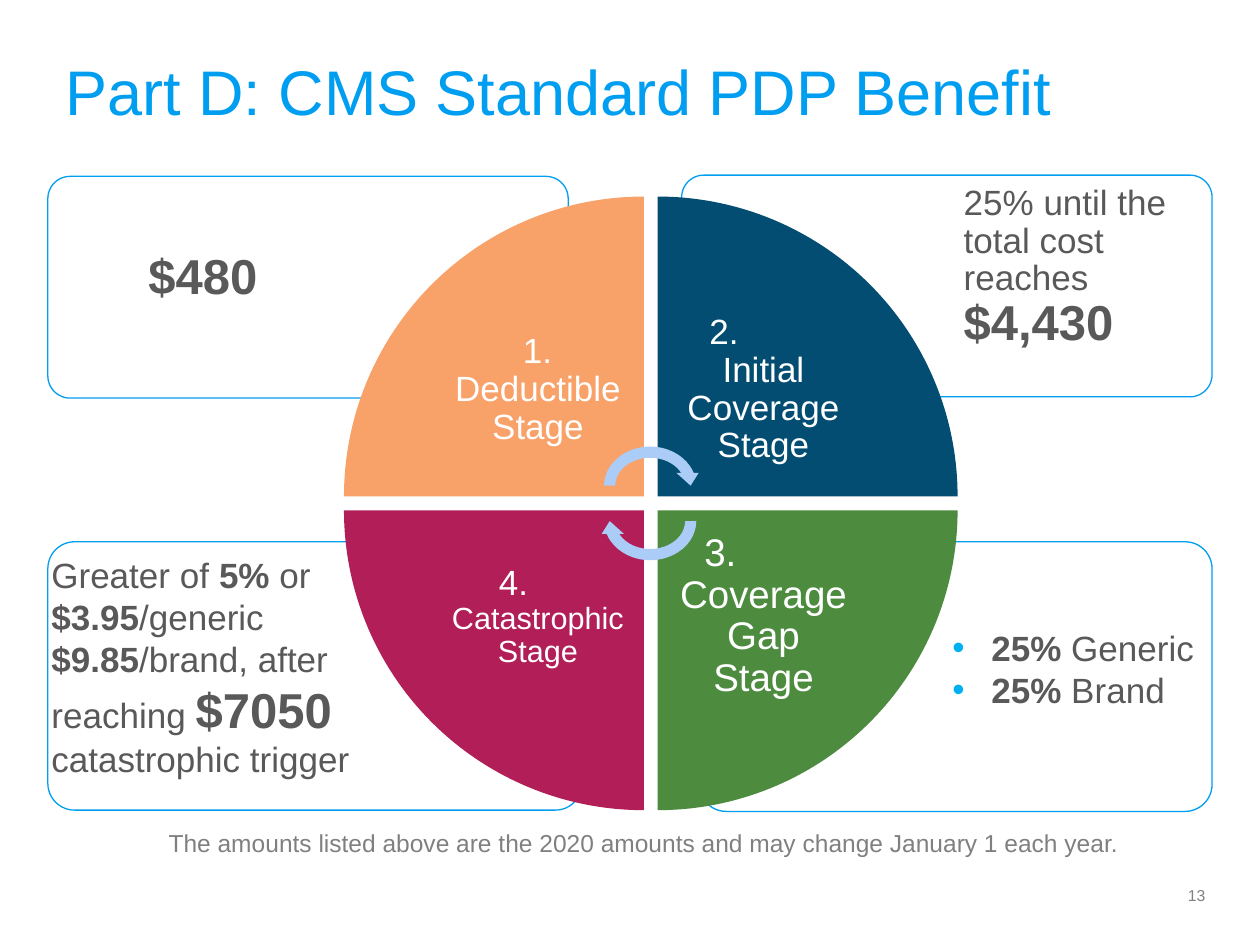
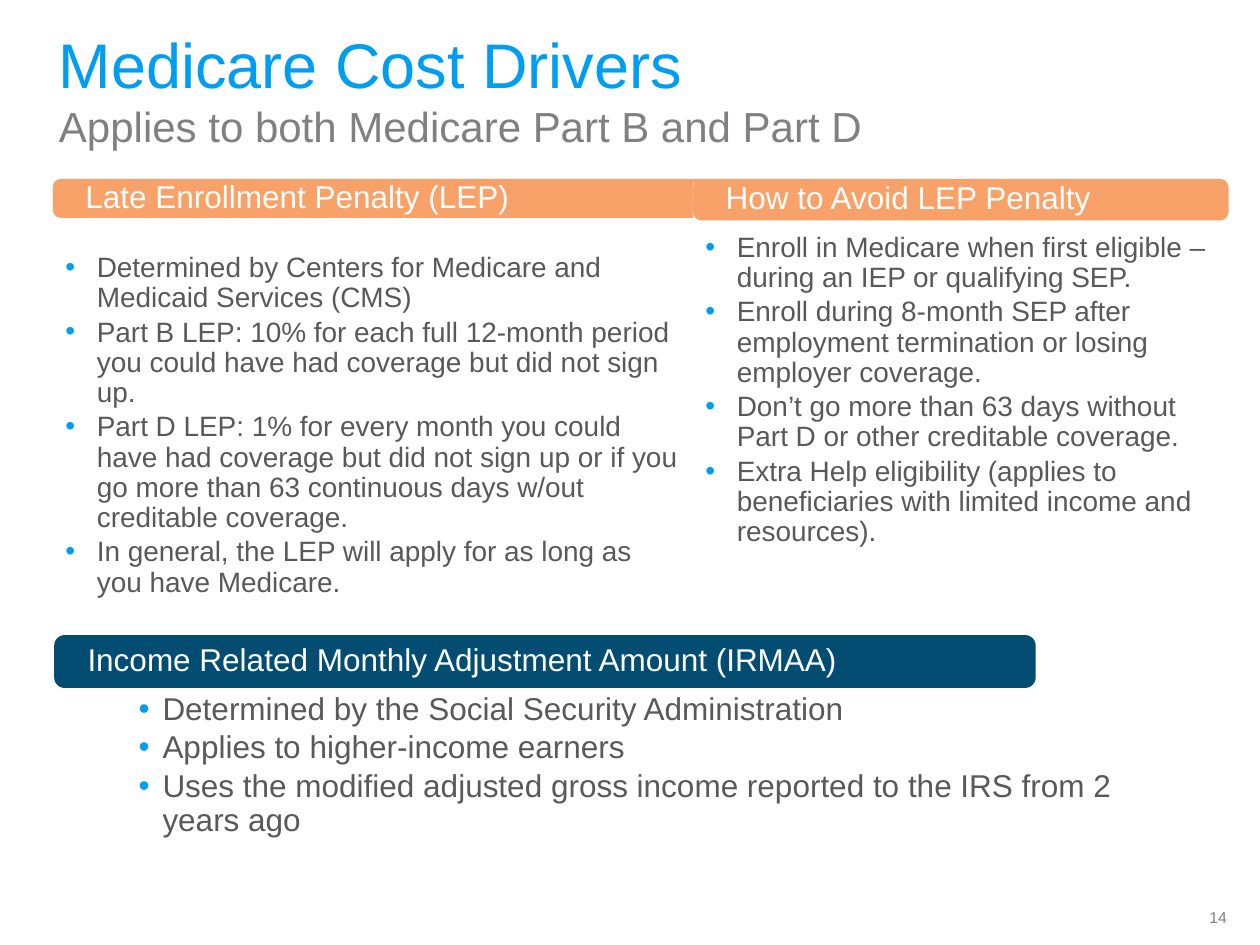
import pptx
import pptx.dml.color
import pptx.enum.shapes
import pptx.enum.text
import pptx.oxml
import pptx.oxml.ns
import pptx.util

PX = 9144  # one px is a hundredth of an inch
FONT = "Arial"
COLORS = {
    "title": "009EF0", "text": "595959", "muted": "808080", "white": "FFFFFF",
    "bullet": "00B0F0", "orange": "F8A169", "navy": "024D71",
    "green": "4D8B3F", "crimson": "B11E58", "arrow": "ABCCF6",
}
SHAPE = pptx.enum.shapes.MSO_SHAPE
ALIGN = pptx.enum.text.PP_ALIGN
ANCHOR = pptx.enum.text.MSO_ANCHOR
Pt = pptx.util.Pt


def place(page, kind, at, fill=None, line=None):
    """Add a preset shape, or a text box when kind is None."""
    left, top, width, height = (value * PX for value in at)
    if kind is None:
        return page.shapes.add_textbox(left, top, width, height)
    shape = page.shapes.add_shape(kind, left, top, width, height)
    shape.shadow.inherit = False
    shape.fill.solid()
    shape.fill.fore_color.rgb = pptx.dml.color.RGBColor.from_string(COLORS[fill])
    if line:
        shape.line.color.rgb = pptx.dml.color.RGBColor.from_string(COLORS[line])
        shape.line.width = Pt(0.75)
    else:
        shape.line.fill.background()
    return shape


def write(box, lines, size, color="text", insets=(10, 5, 10, 5), anchor=ANCHOR.TOP,
          align=ALIGN.LEFT, spacing=1.0, after=0, hang=0, bullet="title"):
    """Fill a box; each line is a list of (text, font overrides)."""
    frame = box.text_frame
    left, top, right, bottom = (value * PX for value in insets)
    settings = {"word_wrap": True, "vertical_anchor": anchor, "margin_left": left,
                "margin_top": top, "margin_right": right, "margin_bottom": bottom}
    for name, value in settings.items():
        setattr(frame, name, value)
    for index, line in enumerate(lines):
        para = frame.add_paragraph() if index else frame.paragraphs[0]
        if hang:
            props = para._p.get_or_add_pPr()
            props.set("marL", str(hang * PX))
            props.set("indent", str(-hang * PX))
            space = pptx.oxml.ns.nsdecls("a")
            for xml in (f'<a:buClr {space}><a:srgbClr val="{COLORS[bullet]}"/></a:buClr>',
                        f'<a:buFont {space} typeface="{FONT}"/>',
                        f'<a:buChar {space} char="•"/>'):
                props.append(pptx.oxml.parse_xml(xml))
        for name, value in {"alignment": align, "line_spacing": spacing,
                            "space_after": Pt(after)}.items():
            setattr(para, name, value)
        for text, changes in line:
            look = {"name": FONT, "size": size, "bold": False, "color": color, **changes}
            span = para.add_run()
            span.text = text
            span.font.color.rgb = pptx.dml.color.RGBColor.from_string(COLORS[look.pop("color")])
            look["size"] = Pt(look["size"])
            for name, value in look.items():
                setattr(span.font, name, value)


deck = pptx.Presentation()
deck.slide_width = 1000 * PX
deck.slide_height = 750 * PX

# Titles and page numbers
subtitle = ("Applies to both Medicare Part B and Part D", {"size": 24, "color": "muted"})
headings = [
    ((42, 37, 913, 71), [[("Part D: CMS Standard PDP Benefit", {})]], "13", (933, 700, 42, 24)),
    ((37, 15, 926, 111), [[("Medicare Cost Drivers", {})], [subtitle]], "14", (950, 717, 42, 24)),
]
pages = []
for title_at, title_lines, number, number_at in headings:
    page = deck.slides.add_slide(deck.slide_layouts[6])
    write(place(page, None, title_at), title_lines, 36, "title")
    write(place(page, None, number_at), [[(number, {})]], 9, "muted", spacing=0.9)
    pages.append(page)
benefit_page, cost_page = pages

# Benefit page: cards behind the wheel
for card_at in ((555, 430, 407, 214), (38, 430, 424, 213),
                (541, 139, 421, 176), (38, 140, 413, 176)):
    card = place(benefit_page, SHAPE.ROUNDED_RECTANGLE, card_at, "white", "title")
    card.adjustments[0] = 0.1

# Wheel of four stages, clockwise from the top left
WEDGE = 238
columns, rows = (273, 522), (156, 405)
label_lefts, label_tops = (357, 536), (241, 421)
stages = [
    # column, row, fill, number, name, number size, name size, number indent
    (0, 0, "orange", "1.", "Deductible Stage", 20, 20, 58),
    (1, 0, "navy", "2.", "Initial Coverage Stage", 20, 20, 27),
    (1, 1, "green", "3.", "Coverage Gap Stage", 22, 22, 23),
    (0, 1, "crimson", "4.", "Catastrophic Stage", 20, 17.5, 39),
]
for turn, (column, row, fill, number, name, number_size, name_size, indent) in enumerate(stages):
    wedge = place(benefit_page, SHAPE.PIE_WEDGE,
                  (columns[column], rows[row], WEDGE, WEDGE), fill)
    wedge.rotation = 90 * turn
    label = place(benefit_page, None, (label_lefts[column], label_tops[row], 140, 137))
    write(label, [[(number, {"size": number_size})], [(name, {})]], name_size, "white",
          insets=(0, 0, 0, 0), anchor=ANCHOR.MIDDLE, align=ALIGN.CENTER, spacing=0.9)
    first = label.text_frame.paragraphs[0]
    first.alignment = ALIGN.LEFT
    first._p.get_or_add_pPr().set("marL", str(indent * PX))

# Cycle arrows in the hub
for top, rotation in ((350, 0), (378, 180)):
    arrow = place(benefit_page, SHAPE.CIRCULAR_ARROW, (475, top, 82, 71), "arrow")
    arrow.rotation = rotation

# Amounts for each stage
BOLD = {"bold": True}
BIG = {"bold": True, "size": 28}
write(place(benefit_page, None, (31, 434, 300, 192)), [
    [("Greater of ", {}), ("5%", BOLD), (" or", {})],
    [("$3.95", BOLD), ("/generic", {})],
    [("$9.85", BOLD), ("/brand, after", {})],
    [("reaching ", {}), ("$7050", BIG)],
    [("catastrophic trigger", {})],
], 20)
write(place(benefit_page, None, (108, 195, 164, 53)), [[("$480", BIG)]], 20, spacing=0.9)
write(place(benefit_page, None, (755, 142, 199, 143)),
      [[("25% until the total cost reaches ", {}), ("$4,430", BIG)]], 20, spacing=0.9)
write(place(benefit_page, None, (746, 492, 216, 77)),
      [[("25% ", BOLD), (kind, {})] for kind in ("Generic", "Brand")],
      20, hang=31, bullet="bullet")
write(place(benefit_page, None, (82, 655, 858, 31)),
      [[("The amounts listed above are the 2020 amounts and may change January 1 each year.", {})]],
      14, "muted", align=ALIGN.CENTER, spacing=0.9)

# Cost page: bulleted panels, each under a coloured band
panels = [
    # panel, insets, size, hang, band, band fill, heading, points
    ((42, 161, 508, 321), (10, 40, 10, 10), 16, 25,
     (42, 142, 520, 31), "orange", "Late Enrollment Penalty (LEP)", [
         "Determined by Centers for Medicare and Medicaid Services (CMS)",
         "Part B LEP: 10% for each full 12-month period you could have had coverage "
         "but did not sign up.",
         "Part D LEP: 1% for every month you could have had coverage but did not sign up "
         "or if you go more than 63 continuous days w/out creditable coverage.",
         "In general, the LEP will apply for as long as you have Medicare."]),
    ((45, 509, 930, 169), (65, 41, 65, 14), 18, 19,
     (43, 504, 779, 42), "navy", "Income Related Monthly Adjustment Amount (IRMAA)", [
         "Determined by the Social Security Administration",
         "Applies to higher-income earners",
         "Uses the modified adjusted gross income reported to the IRS from 2 years ago"]),
    ((550, 145, 423, 337), (10, 40, 10, 10), 16, 25,
     (550, 142, 425, 33), "orange", "How to Avoid LEP Penalty", [
         "Enroll in Medicare when first eligible – during an IEP or qualifying SEP.",
         "Enroll during 8-month SEP after employment termination or losing employer coverage.",
         "Don’t go more than 63 days without Part D or other creditable coverage.",
         "Extra Help eligibility (applies to beneficiaries with limited income and resources)."]),
]
for panel_at, insets, size, hang, band_at, fill, heading, points in panels:
    panel = place(cost_page, SHAPE.RECTANGLE, panel_at, "white")
    write(panel, [[(point, {})] for point in points], size, insets=insets,
          spacing=0.9, after=size * 0.15, hang=hang)
    band = place(cost_page, SHAPE.ROUNDED_RECTANGLE, band_at, fill)
    band.adjustments[0] = 0.2
    write(band, [[(heading, {})]], 18, "white", insets=(24, 2, 24, 2),
          anchor=ANCHOR.MIDDLE, spacing=0.9)

deck.save("out.pptx")
